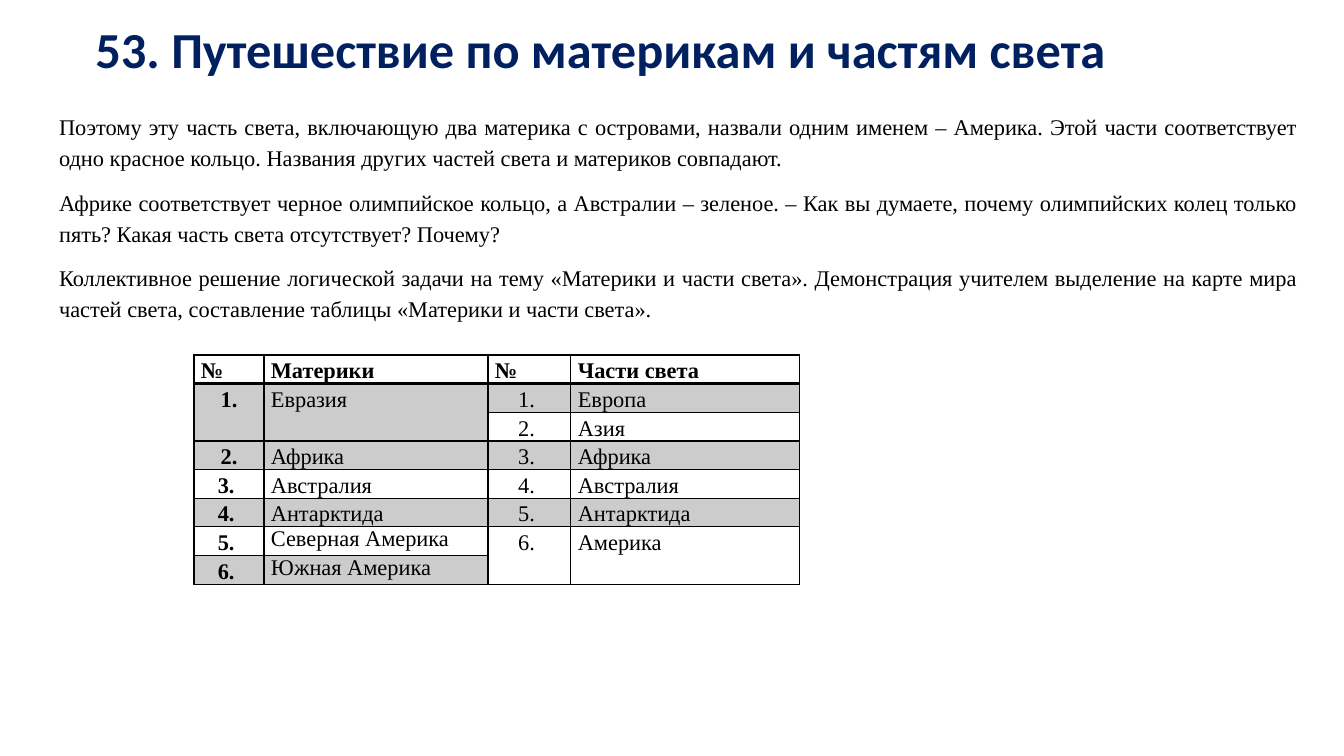
from lxml import etree
from pptx import Presentation
from pptx.dml.color import RGBColor
from pptx.enum.text import MSO_ANCHOR, MSO_AUTO_SIZE, PP_ALIGN
from pptx.oxml.ns import qn
from pptx.util import Emu, Pt

LEFT, CENTER, JUSTIFY = PP_ALIGN.LEFT, PP_ALIGN.CENTER, PP_ALIGN.JUSTIFY
MIDDLE, NO_FIT = MSO_ANCHOR.MIDDLE, MSO_AUTO_SIZE.NONE
NAVY = RGBColor(0x00, 0x20, 0x60)
BLACK = RGBColor(0x00, 0x00, 0x00)
EMU_PER_PX = 914400 / 100.8

TITLE = "53. Путешествие по материкам и частям света "
BODY = [
    "Поэтому эту часть света, включающую два материка с островами, назвали одним именем – Америка. "
    "Этой части соответствует одно красное кольцо. Названия других частей света и материков совпадают.",
    "Африке соответствует черное олимпийское кольцо, а Австралии – зеленое. – Как вы думаете, "
    "почему олимпийских колец только пять? Какая часть света отсутствует? Почему?",
    "Коллективное решение логической задачи на тему «Материки и части света». Демонстрация учителем "
    "выделение на карте мира частей света, составление таблицы «Материки и части света».",
]
ROWS = [
    ("№", "Материки", "№", "Части света"),
    ("1.", "Евразия", "1. ", "Европа"),
    (None, None, "2. ", "Азия"),
    ("2.", "Африка", "3. ", "Африка"),
    ("3. ", "Австралия", "4. ", "Австралия"),
    ("4. ", "Антарктида", "5. ", "Антарктида"),
    ("5. ", "Северная Америка", "6. ", "Америка"),
    ("6. ", "Южная Америка", None, None),
]
COLUMN_WIDTHS = [70, 224, 83, 229]
ROW_HEIGHT = 28
SHADED_ROWS = (1, 3, 5, 7)
SINGLE_SPACED = ("Северная Америка", "Южная Америка")


def px(length):
    return Emu(round(length * EMU_PER_PX))


class SlideBuilder:
    """Holds the text style and the current slide, and adds its elements."""

    font_name = "Times New Roman"
    font_size = 16
    line_spacing = 1.15
    space_after = 10

    def __init__(self, presentation):
        self.slide = presentation.slides.add_slide(presentation.slide_layouts[1])

    def place(self, shape, left, top, width, height):
        shape.left, shape.top = px(left), px(top)
        shape.width, shape.height = px(width), px(height)

    def style(self, paragraph, align, bold=False, spacing=line_spacing):
        paragraph.alignment = align
        paragraph.line_spacing = spacing
        paragraph.space_before = Pt(0)
        paragraph.space_after = Pt(self.space_after)
        font = paragraph.font
        font.name, font.size, font.bold = self.font_name, Pt(self.font_size), bold
        font.color.rgb = BLACK

    def title(self, text, *box):
        shape = self.slide.shapes.title
        self.place(shape, *box)
        frame = shape.text_frame
        frame.text = text
        frame.auto_size, frame.vertical_anchor = NO_FIT, MIDDLE
        paragraph = frame.paragraphs[0]
        paragraph.alignment, paragraph.line_spacing = CENTER, 0.9
        font = paragraph.font
        font.name, font.size, font.bold = "Calibri", Pt(36), True
        font.color.rgb = NAVY

    def body(self, texts, *box):
        shape = self.slide.placeholders[1]
        self.place(shape, *box)
        frame = shape.text_frame
        frame.text = "\n".join(texts)
        frame.auto_size = NO_FIT
        for paragraph in frame.paragraphs:
            properties = paragraph._p.get_or_add_pPr()
            properties.set("marL", "0")
            properties.set("indent", "0")
            etree.SubElement(properties, qn("a:buNone"))
            self.style(paragraph, JUSTIFY)

    def table(self, rows, widths, left, top):
        frame = self.slide.shapes.add_table(
            len(rows), len(widths), px(left), px(top),
            px(sum(widths)), px(ROW_HEIGHT * len(rows)))
        table = frame.table
        table.first_row = table.horz_banding = False
        for column, width in zip(table.columns, widths):
            column.width = px(width)
        for row_index, texts in enumerate(rows):
            table.rows[row_index].height = px(ROW_HEIGHT)
            for column_index, text in enumerate(texts):
                cell = table.cell(row_index, column_index)
                self.cell_format(cell, row_index)
                if text is None:
                    if rows[row_index - 1][column_index] is not None:
                        table.cell(row_index - 1, column_index).merge(cell)
                    continue
                cell.text = text
                header = row_index == 0
                number = column_index % 2 == 0
                self.style(
                    cell.text_frame.paragraphs[0],
                    CENTER if number and not header else LEFT,
                    header or column_index == 0,
                    1.0 if text in SINGLE_SPACED else self.line_spacing)

    def cell_format(self, cell, row_index):
        cell.margin_left = cell.margin_right = px(7)
        cell.margin_top = cell.margin_bottom = 0
        if row_index in SHADED_ROWS:
            cell.fill.solid()
            cell.fill.fore_color.rgb = BLACK
        else:
            cell.fill.background()
        properties = cell._tc.get_or_add_tcPr()
        for color in properties.iter(qn("a:srgbClr")):
            etree.SubElement(color, qn("a:alpha"), val="20000")
        for index, side in enumerate(("lnL", "lnR", "lnT", "lnB")):
            under_header = (row_index, side) in ((0, "lnB"), (1, "lnT"))
            line = etree.Element(qn("a:" + side), w=str(Pt(2 if under_header else 1)))
            fill = etree.SubElement(line, qn("a:solidFill"))
            etree.SubElement(fill, qn("a:srgbClr"), val=str(BLACK))
            properties.insert(index, line)


def main():
    presentation = Presentation()
    presentation.slide_width, presentation.slide_height = px(1344), px(756)
    builder = SlideBuilder(presentation)
    builder.title(TITLE, 27, -21, 1159, 146)
    builder.body(BODY, 49, 104, 1259, 590)
    builder.table(ROWS, COLUMN_WIDTHS, 194, 355)
    presentation.save("out.pptx")


if __name__ == "__main__":
    main()
